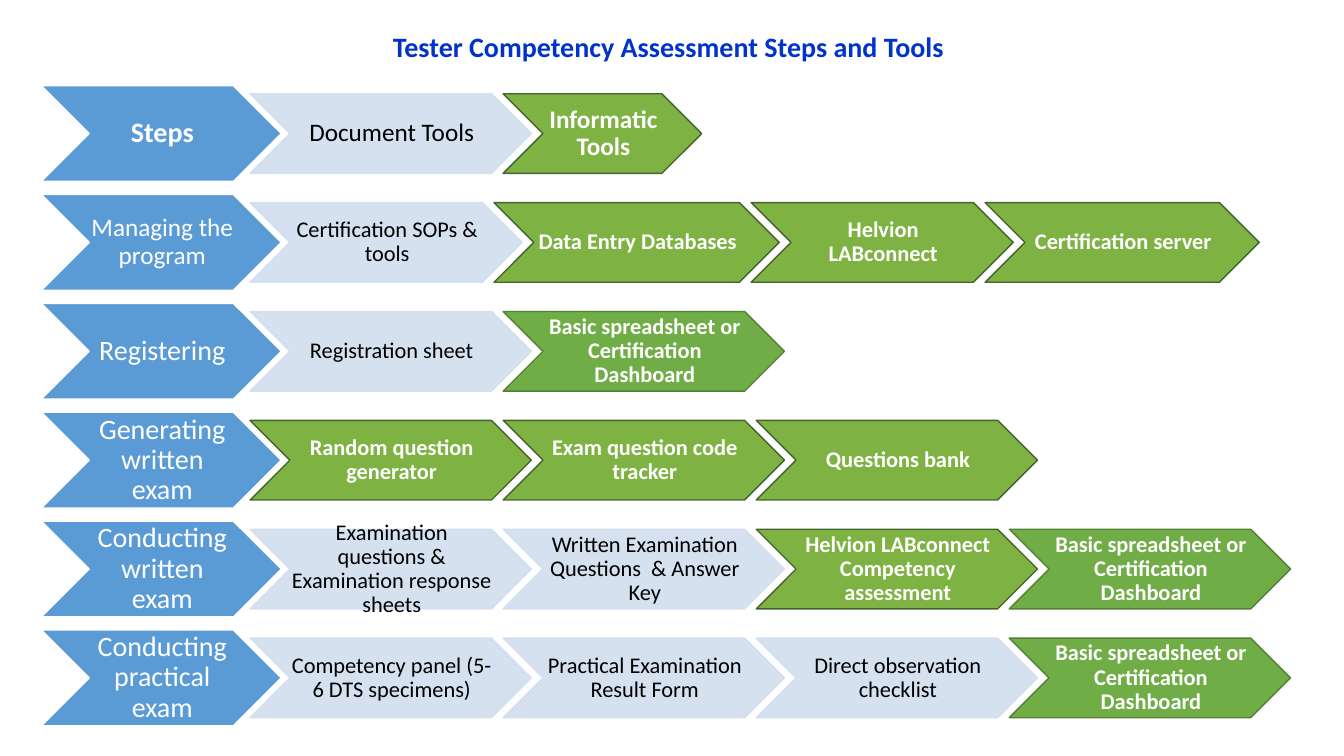
from lxml.etree import SubElement
from pptx import Presentation
from pptx.dml.color import RGBColor
from pptx.enum.shapes import MSO_SHAPE
from pptx.enum.text import MSO_ANCHOR, PP_ALIGN
from pptx.oxml.ns import qn
from pptx.util import Pt

PX = 9144  # 100 px to the inch
FONT = "Calibri"

STEP_WIDTH, STEP_HEIGHT = 238, 95
TOOL_WIDTH, TOOL_HEIGHT = 279, 79
STEP_OVERLAP, TOOL_OVERLAP = 31, 28
ROW_LEFT, ROW_TOP, ROW_PITCH = 41, 85, 108

# fill, line, text colour, bold, opacity in percent
STEP = ("5B9BD5", "FFFFFF", "FFFFFF", False, 100)
HEADING = ("5B9BD5", "FFFFFF", "FFFFFF", True, 100)
DOCUMENT = ("D2DEEF", "D2DEEF", "000000", False, 90)
INFORMATIC = ("70AB2F", "385723", "FFFFFF", True, 90)
DASHBOARD = ("70AD47", "538035", "FFFFFF", True, 100)

SPREADSHEET = (DASHBOARD, "Basic spreadsheet or Certification Dashboard", TOOL_WIDTH)

# step style, step, step size, tool size, tools as (style, wording, width)
ROWS = [
    (HEADING, "Steps", 20, 18, [
        (DOCUMENT, "Document Tools", TOOL_WIDTH),
        (INFORMATIC, "Informatic Tools", 197)]),
    (STEP, "Managing the program", 18, 16, [
        (DOCUMENT, "Certification SOPs & tools", 270),
        (INFORMATIC, "Data Entry Databases", 283),
        (INFORMATIC, "Helvion LABconnect", 260),
        (INFORMATIC, "Certification server", 272)]),
    (STEP, "Registering", 20, 16, [
        (DOCUMENT, "Registration sheet", TOOL_WIDTH),
        SPREADSHEET]),
    (STEP, "Generating written exam", 20, 16, [
        (INFORMATIC, "Random question generator", TOOL_WIDTH),
        (INFORMATIC, "Exam question code tracker", TOOL_WIDTH),
        (INFORMATIC, "Questions bank", TOOL_WIDTH)]),
    (STEP, "Conducting written exam", 20, 16, [
        (DOCUMENT, "Examination questions & Examination response sheets", TOOL_WIDTH),
        (DOCUMENT, "Written Examination Questions  & Answer Key", TOOL_WIDTH),
        (INFORMATIC, "Helvion LABconnect Competency assessment", TOOL_WIDTH),
        SPREADSHEET]),
    (STEP, "Conducting practical exam", 20, 16, [
        (DOCUMENT, "Competency panel (5-6 DTS specimens)", TOOL_WIDTH),
        (DOCUMENT, "Practical Examination Result Form", TOOL_WIDTH),
        (DOCUMENT, "Direct observation checklist", TOOL_WIDTH),
        SPREADSHEET]),
]


def px(*lengths):
    return [length * PX for length in lengths]


def paint(fill, color, opacity=100):
    fill.solid()
    fill.fore_color.rgb = RGBColor.from_string(color)
    if opacity < 100:
        # python-pptx has no public setting for transparency
        rgb = fill._xPr.find(qn("a:solidFill")).find(qn("a:srgbClr"))
        SubElement(rgb, qn("a:alpha"), val=str(opacity * 1000))


def write(frame, wording, size, color, bold):
    frame.word_wrap = True
    frame.vertical_anchor = MSO_ANCHOR.MIDDLE
    paragraph = frame.paragraphs[0]
    paragraph.alignment = PP_ALIGN.CENTER
    paragraph.line_spacing = 0.9
    run = paragraph.add_run()
    run.text = wording
    run.font.name = FONT
    run.font.size = Pt(size)
    run.font.bold = bold
    paint(run.font.fill, color)


def add_title(slide, left, top, width, height):
    title = slide.shapes.add_textbox(*px(left, top, width, height))
    write(title.text_frame, "Tester Competency Assessment Steps and Tools", 20, "0033CC", True)


def add_chevron(slide, box, style, wording, size):
    fill, line, color, bold, opacity = style
    chevron = slide.shapes.add_shape(MSO_SHAPE.CHEVRON, *px(*box))
    chevron.shadow.inherit = False
    paint(chevron.fill, fill, opacity)
    paint(chevron.line.fill, line, opacity)
    chevron.line.width = Pt(1)
    frame = chevron.text_frame
    frame.margin_left, frame.margin_top, frame.margin_right, frame.margin_bottom = px(2, 1, 0, 1)
    write(frame, wording, size, color, bold)


def add_row(slide, left, top, row):
    """Draw a step, then its tools, each tucked into the notch of the next."""
    step_style, step, step_size, tool_size, tools = row
    add_chevron(slide, (left, top, STEP_WIDTH, STEP_HEIGHT), step_style, step, step_size)
    tool_left = left + STEP_WIDTH - STEP_OVERLAP
    tool_top = top + (STEP_HEIGHT - TOOL_HEIGHT) // 2
    for style, wording, width in tools:
        add_chevron(slide, (tool_left, tool_top, width, TOOL_HEIGHT), style, wording, tool_size)
        tool_left += width - TOOL_OVERLAP


def main():
    deck = Presentation()
    deck.slide_width, deck.slide_height = px(1333, 750)
    slide = deck.slides.add_slide(deck.slide_layouts[6])
    add_title(slide, 283, 19, 760, 58)
    for index, row in enumerate(ROWS):
        add_row(slide, ROW_LEFT, ROW_TOP + index * ROW_PITCH, row)
    deck.save("out.pptx")


if __name__ == "__main__":
    main()
